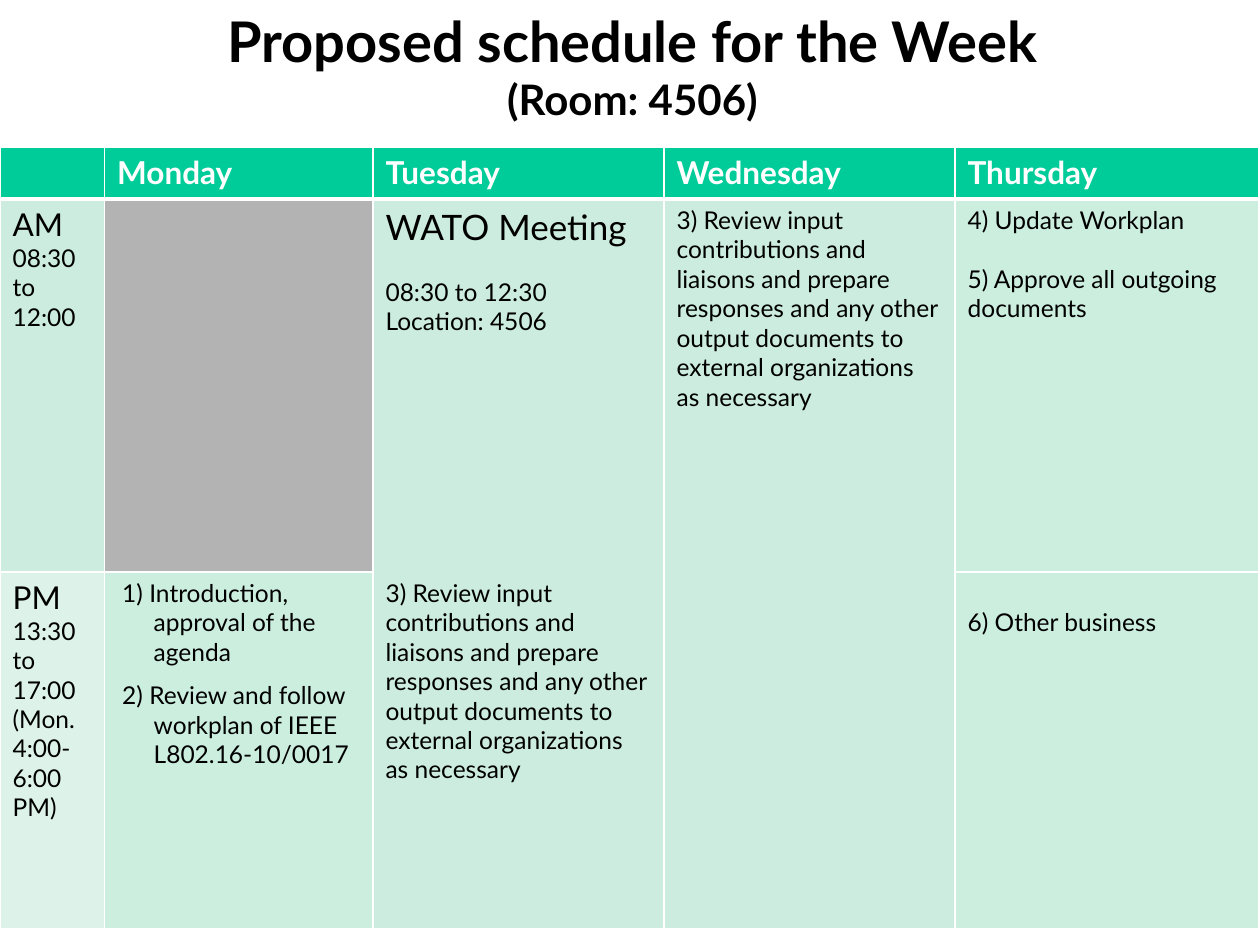
from dataclasses import dataclass

from pptx import Presentation
from pptx.dml.color import RGBColor
from pptx.enum.text import MSO_ANCHOR, MSO_AUTO_SIZE, PP_ALIGN
from pptx.oxml.ns import qn
from pptx.oxml.xmlchemy import OxmlElement
from pptx.util import Inches, Pt

CENTER, LEFT = PP_ALIGN.CENTER, PP_ALIGN.LEFT
TOP = MSO_ANCHOR.TOP
NO_AUTOFIT = MSO_AUTO_SIZE.NONE

BLACK = RGBColor(0x00, 0x00, 0x00)
WHITE = RGBColor(0xFF, 0xFF, 0xFF)
HEADER_GREEN = RGBColor(0x00, 0xCC, 0x99)
SESSION_GREEN = RGBColor(0xCB, 0xEC, 0xDE)
AGENDA_GREEN = RGBColor(0xCC, 0xEE, 0xDF)
PALE_GREEN = RGBColor(0xDD, 0xF3, 0xEA)
GRAY = RGBColor(0xB3, 0xB3, 0xB3)

TITLE_ONLY = 5
BLANK_LINE = 16.8  # height in points of one 14 point line

DAYS = ["", "Monday", "Tuesday", "Wednesday", "Thursday"]
COLUMN_WIDTHS = [0.83, 2.13, 2.31, 2.31, 2.41]
ROW_HEIGHTS = [0.41, 2.96, 0, 2.83]
REVIEW = ("3) Review input contributions and liaisons and prepare responses and any "
          "other output documents to external organizations as necessary")


@dataclass
class Entry:
    """One schedule cell: lines are (text, format) pairs, rows is its row span."""
    fill: RGBColor
    lines: list
    rows: int = 1
    top_gap: float = 0


AGENDA_ITEM = {"margin": 0.29, "indent": -0.25, "before": 8}
ENTRIES = {
    (1, 0): Entry(SESSION_GREEN, [("AM", {"size": 18}), ("08:30 to 12:00", {})], rows=2),
    (1, 1): Entry(GRAY, [], rows=2),
    (1, 2): Entry(SESSION_GREEN, [("WATO Meeting", {"size": 20}),
                                  ("08:30 to 12:30", {"before": BLANK_LINE}),
                                  ("Location: 4506", {})]),
    (1, 3): Entry(SESSION_GREEN, [(REVIEW, {})], rows=3),
    (1, 4): Entry(AGENDA_GREEN, [("4) Update Workplan", {}),
                                 ("5) Approve all outgoing documents", {"before": BLANK_LINE})],
                  rows=2),
    (2, 2): Entry(SESSION_GREEN, [(REVIEW, {})], rows=2),
    (3, 0): Entry(PALE_GREEN, [("PM", {"size": 18}), ("13:30 to 17:00", {}),
                               ("(Mon. 4:00-6:00 PM)", {})]),
    (3, 1): Entry(AGENDA_GREEN, [("1) Introduction, approval of the agenda", AGENDA_ITEM),
                                 ("2) Review and follow workplan of IEEE L802.16-10/0017",
                                  AGENDA_ITEM)]),
    (3, 4): Entry(AGENDA_GREEN, [("6) Other business", {"margin": 0.25, "indent": -0.25})],
                  top_gap=BLANK_LINE),
}


def add_text(paragraph, text, font="Lato", size=14, color=BLACK, bold=False,
             align=LEFT, before=0, margin=0, indent=0):
    paragraph.alignment = align
    paragraph.space_before = Pt(before)
    properties = paragraph._p.get_or_add_pPr()
    properties.set("marL", str(Inches(margin)))
    properties.set("indent", str(Inches(indent)))
    run = paragraph.add_run()
    run.text = text
    run.font.name = font
    run.font.size = Pt(size)
    run.font.bold = bold
    run.font.color.rgb = color


def add_sized_break(paragraph, size):
    """Add a line break whose own size does not stretch the line."""
    paragraph.add_line_break()
    properties = OxmlElement("a:rPr")
    properties.set("sz", str(size * 100))
    paragraph._p.findall(qn("a:br"))[-1].append(properties)


def set_borders(cell, color, **widths):
    cell_properties = cell._tc.get_or_add_tcPr()
    for side in ("L", "R", "T", "B"):
        line = OxmlElement(f"a:ln{side}")
        line.set("w", str(Pt(widths.get(side, 1))))
        fill = OxmlElement("a:solidFill")
        value = OxmlElement("a:srgbClr")
        value.set("val", str(color))
        fill.append(value)
        line.append(fill)
        cell_properties.append(line)


class ScheduleSlide:
    def __init__(self, presentation):
        self.border = WHITE
        self.slide = presentation.slides.add_slide(presentation.slide_layouts[TITLE_ONLY])

    def title(self, heading, subheading):
        shape = self.slide.shapes.title
        shape.left, shape.top = Inches(0.5), Inches(0)
        shape.width, shape.height = Inches(9), Inches(0.95)
        frame = shape.text_frame
        frame.auto_size = NO_AUTOFIT
        frame.vertical_anchor = TOP
        paragraph = frame.paragraphs[0]
        style = {"bold": True, "align": CENTER, "margin": 0.04}
        add_text(paragraph, heading, size=32, **style)
        add_sized_break(paragraph, 32)
        add_text(paragraph, subheading, size=24, **style)

    def table(self, left, top, column_widths, row_heights):
        table = self.slide.shapes.add_table(
            len(row_heights), len(column_widths), Inches(left), Inches(top),
            Inches(sum(column_widths)), Inches(sum(row_heights))).table
        table.horz_banding = False
        for column, width in zip(table.columns, column_widths):
            column.width = Inches(width)
        for row, height in zip(table.rows, row_heights):
            row.height = Inches(height)
        for index, row in enumerate(table.rows):
            heavy_side = {0: {"B": 3}, 1: {"T": 3}}.get(index, {})
            for cell in row.cells:
                set_borders(cell, self.border, **heavy_side)
        return table

    def header(self, table, names):
        for cell, name in zip(table.rows[0].cells, names):
            cell.fill.solid()
            cell.fill.fore_color.rgb = HEADER_GREEN
            if name:
                add_text(cell.text_frame.paragraphs[0], name, size=18, color=WHITE, bold=True)

    def entry(self, table, row, column, entry):
        cell = table.cell(row, column)
        if entry.rows > 1:
            cell.merge(table.cell(row + entry.rows - 1, column))
        cell.fill.solid()
        cell.fill.fore_color.rgb = entry.fill
        cell.margin_top = Inches(0.05) + Pt(entry.top_gap)
        frame = cell.text_frame
        for index, (text, style) in enumerate(entry.lines):
            paragraph = frame.add_paragraph() if index else frame.paragraphs[0]
            add_text(paragraph, text, **style)


def main():
    presentation = Presentation()
    presentation.slide_width, presentation.slide_height = Inches(10), Inches(7.5)
    schedule = ScheduleSlide(presentation)
    schedule.title("Proposed schedule for the Week", "(Room: 4506)")
    table = schedule.table(0, 1.17, COLUMN_WIDTHS, ROW_HEIGHTS)
    schedule.header(table, DAYS)
    for (row, column), entry in ENTRIES.items():
        schedule.entry(table, row, column, entry)
    presentation.save("out.pptx")


if __name__ == "__main__":
    main()
